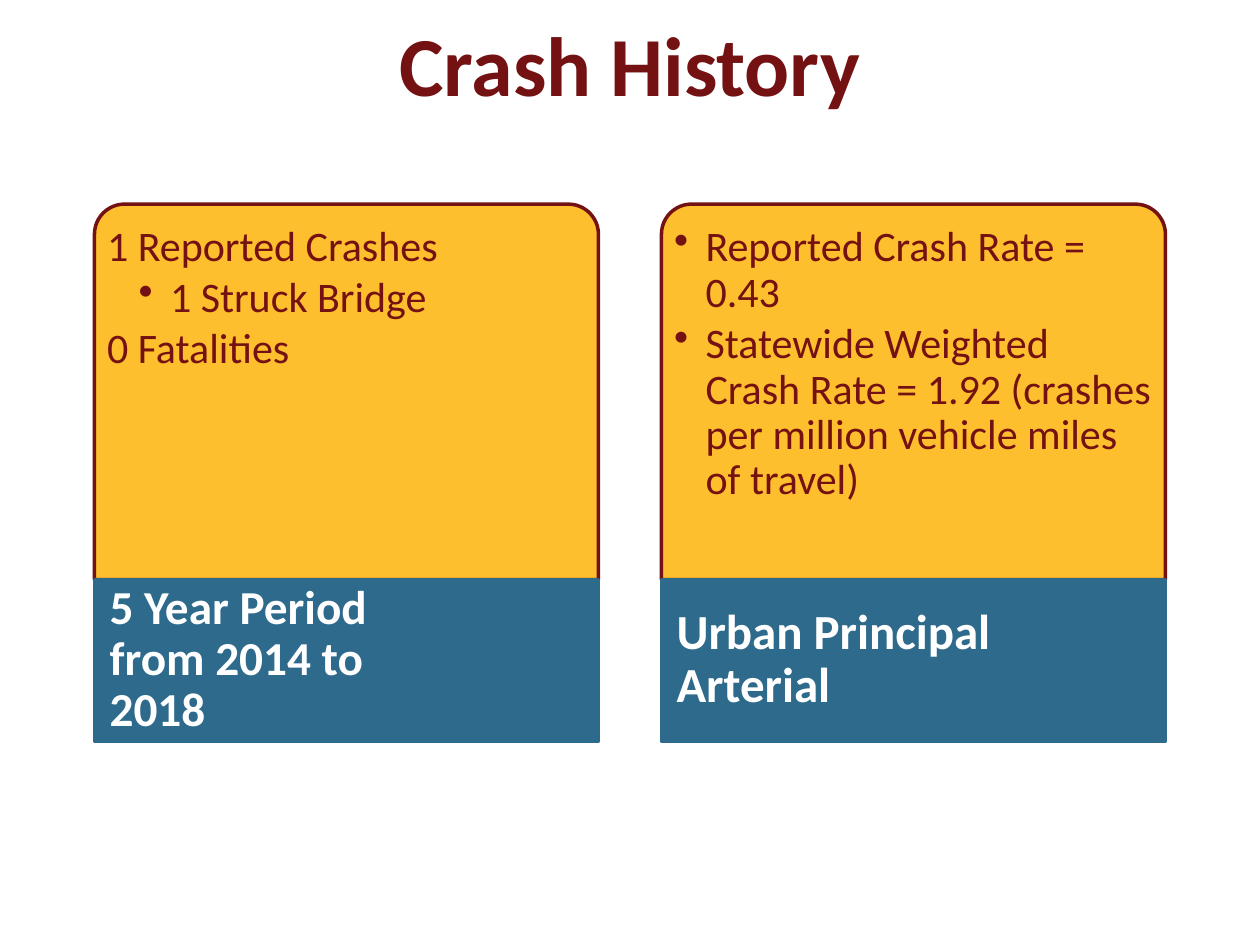
from lxml import etree
from pptx import Presentation
from pptx.dml.color import RGBColor
from pptx.enum.shapes import MSO_SHAPE
from pptx.enum.text import MSO_ANCHOR, PP_ALIGN
from pptx.oxml.ns import qn
from pptx.util import Inches, Pt

ROUND_TOP = MSO_SHAPE.ROUND_2_SAME_RECTANGLE
RECT = MSO_SHAPE.RECTANGLE
MIDDLE, TOP = MSO_ANCHOR.MIDDLE, MSO_ANCHOR.TOP
LEFT, CENTER = PP_ALIGN.LEFT, PP_ALIGN.CENTER

MAROON = RGBColor(0x74, 0x11, 0x12)
GOLD = RGBColor(0xFD, 0xB9, 0x17)
BLUE = RGBColor(0x2E, 0x6A, 0x8C)
WHITE = RGBColor(0xFF, 0xFF, 0xFF)
FONT = "Calibri"

# Content: each finding is (text, level, bulleted)
TITLE = "Crash History"
CARDS = [
    {
        "findings": [
            ("1 Reported Crashes", 1, False),
            ("1 Struck Bridge", 2, True),
            ("0 Fatalities", 1, False),
        ],
        "gap": 3,
        "caption": "5 Year Period from 2014 to 2018",
        "caption_size": 27,
    },
    {
        "findings": [
            ("Reported Crash Rate = 0.43", 1, True),
            ("Statewide Weighted Crash Rate = 1.92 "
             "(crashes per million vehicle miles of travel)", 1, True),
        ],
        "gap": 3.6,
        "caption": "Urban Principal Arterial",
        "caption_size": 28,
    },
]

# Layout in inches
CARD_LEFT, CARD_TOP, CARD_PITCH = 0.75, 1.62, 4.5
CARD_W, BODY_H, CAPTION_H = 4, 2.98, 1.28
CAPTION_W = 2.81
PADDING = 0.07
INDENT = 0.25


def add_panel(slide, kind, box, fill, line):
    panel = slide.shapes.add_shape(kind, *map(Inches, box))
    panel.shadow.inherit = False
    panel.fill.solid()
    panel.fill.fore_color.rgb = fill
    panel.line.color.rgb = line
    panel.line.width = Pt(2)
    return panel


def add_text_frame(slide, box, insets, anchor):
    frame = slide.shapes.add_textbox(*map(Inches, box)).text_frame
    frame.word_wrap = True
    frame.vertical_anchor = anchor
    (frame.margin_left, frame.margin_top,
     frame.margin_right, frame.margin_bottom) = map(Inches, insets)
    return frame


def style(paragraph, size, color, bold=False, align=LEFT):
    paragraph.alignment = align
    font = paragraph.font
    font.name, font.size, font.bold = FONT, Pt(size), bold
    font.color.rgb = color


def set_bullet(paragraph, level, bulleted):
    paragraph.level = level - 1
    props = paragraph._p.get_or_add_pPr()
    props.set("marL", str(Inches(INDENT * level)))
    props.set("indent", str(Inches(-INDENT)))
    if bulleted:
        etree.SubElement(props, qn("a:buChar"), char="•")
    else:
        etree.SubElement(props, qn("a:buNone"))


def add_card(slide, left, card):
    # Gold body with rounded top corners, slightly see-through
    body = add_panel(slide, ROUND_TOP, (left, CARD_TOP, CARD_W, BODY_H), GOLD, MAROON)
    body.adjustments[0], body.adjustments[1] = 0.08, 0
    gold = body.fill._xPr.find(qn("a:solidFill"))[0]
    etree.SubElement(gold, qn("a:alpha"), val="90000")

    # Findings
    inner = (left + PADDING, CARD_TOP + PADDING, CARD_W - 2 * PADDING, BODY_H - PADDING)
    frame = add_text_frame(slide, inner, (0.03, 0.1, 0.03, 0.03), TOP)
    for i, (text, level, bulleted) in enumerate(card["findings"]):
        paragraph = frame.paragraphs[0] if i == 0 else frame.add_paragraph()
        paragraph.text = text
        set_bullet(paragraph, level, bulleted)
        paragraph.line_spacing = 0.9
        paragraph.space_after = Pt(card["gap"])
        style(paragraph, 24, MAROON)

    # Blue caption band
    band_top = CARD_TOP + BODY_H
    add_panel(slide, RECT, (left, band_top, CARD_W, CAPTION_H), BLUE, BLUE)
    frame = add_text_frame(slide, (left, band_top, CAPTION_W, CAPTION_H),
                           (0.12, 0, 0.04, 0), MIDDLE)
    caption = frame.paragraphs[0]
    caption.text = card["caption"]
    caption.line_spacing = 0.9
    style(caption, card["caption_size"], WHITE, bold=True)


def main():
    prs = Presentation()
    prs.slide_width, prs.slide_height = Inches(10), Inches(7.5)
    slide = prs.slides.add_slide(prs.slide_layouts[6])

    # Title
    frame = add_text_frame(slide, (0.5, 0, 9, 1), (0.1, 0.05, 0.1, 0.05), MIDDLE)
    frame.text = TITLE
    style(frame.paragraphs[0], 48, MAROON, bold=True, align=CENTER)

    # Cards side by side
    for i, card in enumerate(CARDS):
        add_card(slide, CARD_LEFT + i * CARD_PITCH, card)

    prs.save("out.pptx")


if __name__ == "__main__":
    main()
